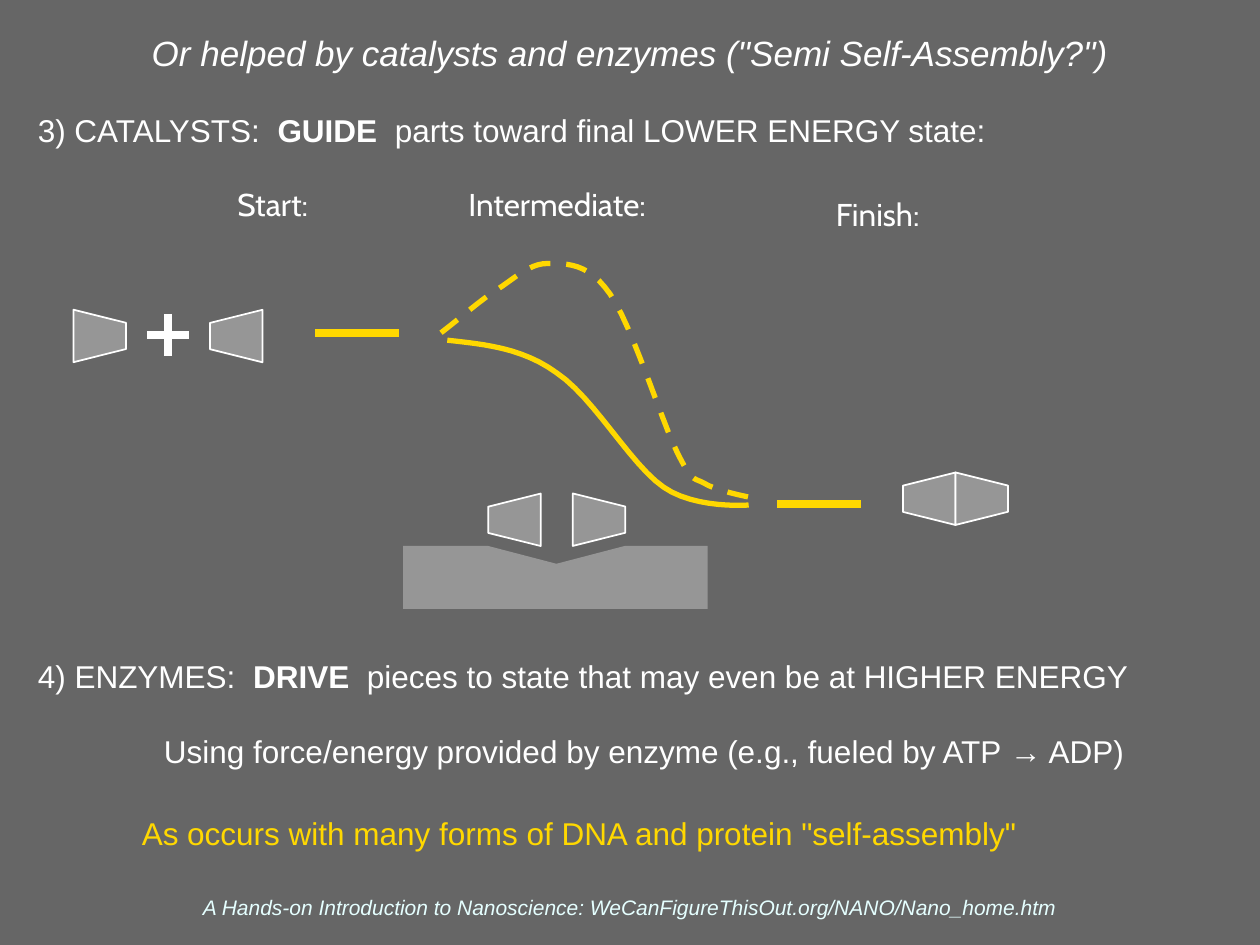
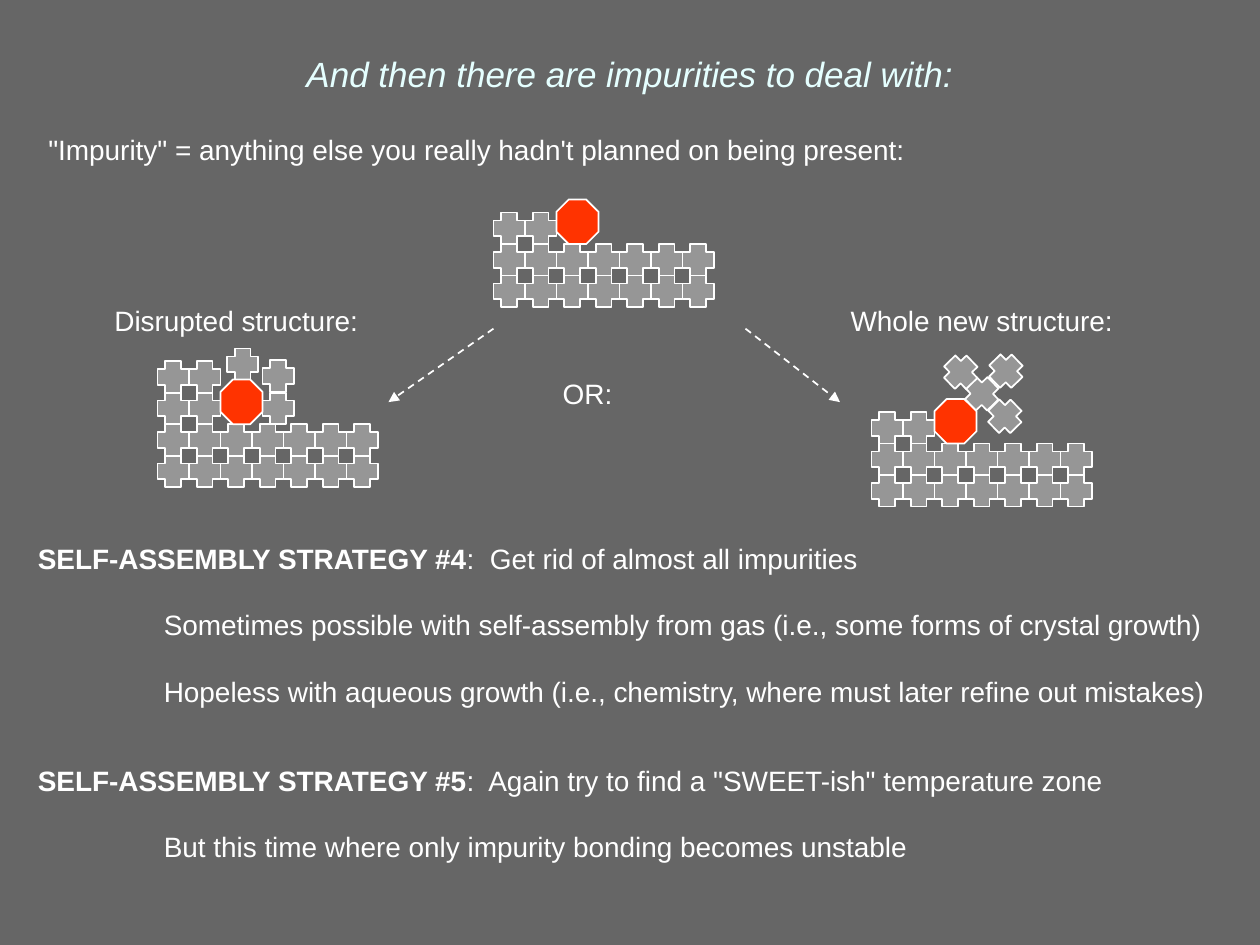
from lxml.etree import SubElement
from pptx import Presentation
from pptx.dml.color import RGBColor
from pptx.enum.dml import MSO_LINE
from pptx.enum.shapes import MSO_CONNECTOR, MSO_SHAPE
from pptx.enum.text import MSO_ANCHOR, MSO_AUTO_SIZE, PP_ALIGN
from pptx.oxml.ns import qn
from pptx.util import Inches, Pt

COLS, ROWS = 120, 90
WIDTH, HEIGHT = Inches(10), Inches(7.5)
INSET = Inches(0.05)
GRAY = RGBColor(0x66, 0x66, 0x66)
PIECE = RGBColor(0x96, 0x96, 0x96)
WHITE = RGBColor(0xFF, 0xFF, 0xFF)
ICE = RGBColor(0xE5, 0xFF, 0xFF)
YELLOW = RGBColor(0xFF, 0xD8, 0x00)
RED = RGBColor(0xFF, 0x33, 0x00)
STEP = 3


def col(n):
    return round(WIDTH * n / COLS)


def row(n):
    return round(HEIGHT * n / ROWS)


def place(x, y, w, h):
    return col(x), row(y), col(w), row(h)


def setup_frame(shape, anchor):
    tf = shape.text_frame
    tf.word_wrap = True
    tf.auto_size = MSO_AUTO_SIZE.NONE
    tf.vertical_anchor = anchor
    tf.margin_left = tf.margin_right = tf.margin_top = tf.margin_bottom = INSET
    return tf


def add_run(p, text, size, color=WHITE, bold=False, italic=False, font="Arial"):
    r = p.add_run()
    r.text = text
    r.font.size = Pt(size)
    r.font.name = font
    r.font.color.rgb = color
    r.font.bold = bold
    r.font.italic = italic


def add_text(s, box, paragraphs, size, align=PP_ALIGN.LEFT, anchor=MSO_ANCHOR.TOP, **style):
    tf = setup_frame(s.shapes.add_textbox(*place(*box)), anchor)
    for i, (before, indent, runs) in enumerate(paragraphs):
        p = tf.paragraphs[0] if i == 0 else tf.add_paragraph()
        p.alignment = align
        p.space_before = Pt(before)
        if indent:
            p._p.get_or_add_pPr().set("marL", str(col(indent)))
        for text, changes in runs:
            add_run(p, text, size, **{**style, **changes})


def add_line_of_text(s, box, text, size, **style):
    add_text(s, box, [(0, 0, [(text, {})])], size, **style)


def add_title_slide(prs, title, box, color):
    s = prs.slides.add_slide(prs.slide_layouts[5])
    sp = s.shapes.title
    sp.left, sp.top, sp.width, sp.height = place(*box)
    p = setup_frame(sp, MSO_ANCHOR.MIDDLE).paragraphs[0]
    p.alignment = PP_ALIGN.CENTER
    add_run(p, title, 20, color, italic=True)
    return s


def add_piece(s, kind, box, color=PIECE, rotation=0):
    sp = s.shapes.add_shape(kind, *place(*box))
    sp.shadow.inherit = False
    sp.fill.solid()
    sp.fill.fore_color.rgb = color
    sp.line.color.rgb = WHITE
    sp.line.width = Pt(1)
    sp.rotation = rotation
    return sp


def add_line(s, x1, y1, x2, y2, color, width):
    c = s.shapes.add_connector(MSO_CONNECTOR.STRAIGHT, col(x1), row(y1), col(x2), row(y2))
    c.line.color.rgb = color
    c.line.width = Pt(width)
    SubElement(c._element.spPr, qn("a:effectLst"))
    return c


def add_arrow(s, x1, y1, x2, y2):
    c = add_line(s, x1, y1, x2, y2, WHITE, 1)
    c.line.dash_style = MSO_LINE.DASH
    SubElement(c.line._get_or_add_ln(), qn("a:tailEnd"), type="triangle")


def add_outline(s, left, top, points, close):
    spots = [(col(left + x), row(top + y)) for x, y in points]
    fb = s.shapes.build_freeform(*spots[0])
    fb.add_line_segments(spots[1:], close=close)
    sp = fb.convert_to_shape()
    sp.shadow.inherit = False
    return sp


def curve_points(start, bends, steps=12):
    points = [start]
    for bend in bends:
        ends = (points[-1], *bend)
        for i in range(1, steps + 1):
            t = i / steps
            weights = ((1 - t) ** 3, 3 * t * (1 - t) ** 2, 3 * t * t * (1 - t), t ** 3)
            points.append(tuple(sum(k * e[axis] for k, e in zip(weights, ends)) for axis in (0, 1)))
    return points


def add_curve(s, left, top, start, bends):
    sp = add_outline(s, left, top, curve_points(start, bends), False)
    sp.fill.background()
    sp.line.color.rgb = YELLOW
    sp.line.width = Pt(3)
    return sp


def add_energy_diagram(s, left, top):
    for x, y, w, text in ((22, 0, 12, "Start:"), (44, 0, 21, "Intermediate:"), (79, 1, 12, "Finish:")):
        add_line_of_text(s, (left + x, top + y, w, 4), text, 18, font="Cabin")
    for x, y, rotation in ((7, 12.5, 90), (20, 12.5, 270), (86, 28, 270), (91, 28, 90),
                           (46.5, 30, 270), (54.55, 30, 90)):
        add_piece(s, MSO_SHAPE.TRAPEZOID, (left + x, top + y, 5, 5), rotation=rotation)
    for x1, y1, x2, y2, color in ((14, 14.95, 18, 14.95, WHITE), (16, 12.9, 16, 16.9, WHITE),
                                  (30, 14.7, 38, 14.7, YELLOW), (74, 31, 82, 31, YELLOW)):
        add_line(s, left + x1, top + y1, left + x2, top + y2, color, 4.5)
    unaided = add_curve(s, left, top, (42, 14.7), (
        ((43.7, 13.4), (45.4, 11.9), (47, 10.8)),
        ((48.7, 9.8), (50.3, 8.1), (52.1, 8.1)),
        ((54, 8.1), (56, 8), (58.1, 11)),
        ((60.2, 14), (63, 23.1), (64.5, 26.1)),
        ((66, 29.1), (66, 28.4), (67.2, 29.1)),
        ((68.4, 29.8), (71.6, 30.4), (71.6, 30.4))))
    unaided.line.dash_style = MSO_LINE.DASH
    add_curve(s, left, top, (42.6, 15.4), (
        ((46.1, 15.8), (49.7, 16.1), (53, 18.5)),
        ((56.5, 20.8), (60.1, 27.3), (63.2, 29.4)),
        ((66.2, 31.5), (71.3, 31.1), (71.3, 31.1))))
    catalyst = add_outline(s, left, top, ((38.4, 35), (46.5, 35), (53, 36.7), (59.5, 35),
                                          (67.4, 35), (67.4, 41), (38.4, 41)), True)
    catalyst.fill.solid()
    catalyst.fill.fore_color.rgb = PIECE
    catalyst.line.fill.background()


def add_crystal(s, left, top, extras=(), rotation=0):
    lattice = [(c * STEP, r * STEP) for r, count in enumerate((2, 7, 7)) for c in range(count)]
    for cells, turn in ((lattice, 0), (extras, rotation)):
        for x, y in cells:
            add_piece(s, MSO_SHAPE.CROSS, (left + x, top + y, STEP, STEP), rotation=turn)
    add_piece(s, MSO_SHAPE.OCTAGON, (left + 2 * STEP, top - 1.25, 4, 4.25), RED)


def build_catalysts(prs):
    s = add_title_slide(prs, 'Or helped by catalysts and enzymes ("Semi Self-Assembly?")',
                        (4, 1, 112, 8), WHITE)
    add_text(s, (3, 10, 114, 5), [(0, 0, [
        ("3) CATALYSTS:  ", {}), ("GUIDE", {"bold": True}),
        ("  parts toward final LOWER ENERGY state:", {})])], 18)
    add_energy_diagram(s, 0, 17)
    add_text(s, (3, 62, 117, 19), [
        (0, 0, [("4) ENZYMES:  ", {}), ("DRIVE ", {"bold": True}),
                (" pieces to state that may even be at HIGHER ENERGY", {})]),
        (21, 12, [("Using force/energy provided by enzyme (e.g., fueled by ATP ", {}),
                  ("→", {"bold": True, "italic": True}), (" ADP)", {})]),
        (25.5, 9.9, [('As occurs with many forms of DNA and protein "self-assembly"',
                      {"color": YELLOW})])], 18)
    add_line_of_text(s, (4, 84.7, 112, 3.5),
                     "A Hands-on Introduction to Nanoscience: WeCanFigureThisOut.org/NANO/Nano_home.htm",
                     12, align=PP_ALIGN.CENTER, anchor=MSO_ANCHOR.BOTTOM, color=ICE, italic=True)


def build_impurities(prs):
    s = add_title_slide(prs, "And then there are impurities to deal with:", (4, 4, 112, 6), ICE)
    add_line_of_text(s, (4, 12, 114, 4),
                     '"Impurity" = anything else you really hadn\'t planned on being present:', 16)
    add_crystal(s, 47, 20.25)
    add_crystal(s, 15, 37.4, ((0, -3), (3, -3), (6.6, -4.2), (10, 0), (10, -3.1)))
    add_crystal(s, 83, 39.25, ((9, -3.25), (11.2, -1.1), (11.3, -5.4), (7, -5.3)), 45.6)
    add_arrow(s, 47, 31.3, 37, 38.3)
    add_arrow(s, 71, 31.3, 80, 38.3)
    add_line_of_text(s, (53, 35.3, 7, 4), "OR:", 16)
    for x, text in ((6, "Disrupted structure:"), (77, "Whole new structure:")):
        add_line_of_text(s, (x, 28.3, 33, 4), text, 16, align=PP_ALIGN.CENTER)
    bold = {"bold": True}
    add_text(s, (3, 51, 117, 36), [
        (0, 0, [("SELF-ASSEMBLY STRATEGY #4", bold), (":  Get rid of almost all impurities", {})]),
        (18.7, 12, [("Sometimes possible with self-assembly from gas "
                     "(i.e., some forms of crystal growth)", {})]),
        (18.7, 12, [("Hopeless with aqueous growth "
                     "(i.e., chemistry, where must later refine out mistakes)", {})]),
        (31.9, 0, [("SELF-ASSEMBLY STRATEGY #5", bold),
                   (':  Again try to find a "SWEET-ish" temperature zone', {})]),
        (18.7, 12, [("But this time where only impurity bonding becomes unstable", {})])], 16)


def main():
    prs = Presentation()
    prs.slide_width, prs.slide_height = WIDTH, HEIGHT
    fill = prs.slide_master.background.fill
    fill.solid()
    fill.fore_color.rgb = GRAY
    build_catalysts(prs)
    build_impurities(prs)
    prs.save("out.pptx")


if __name__ == "__main__":
    main()
